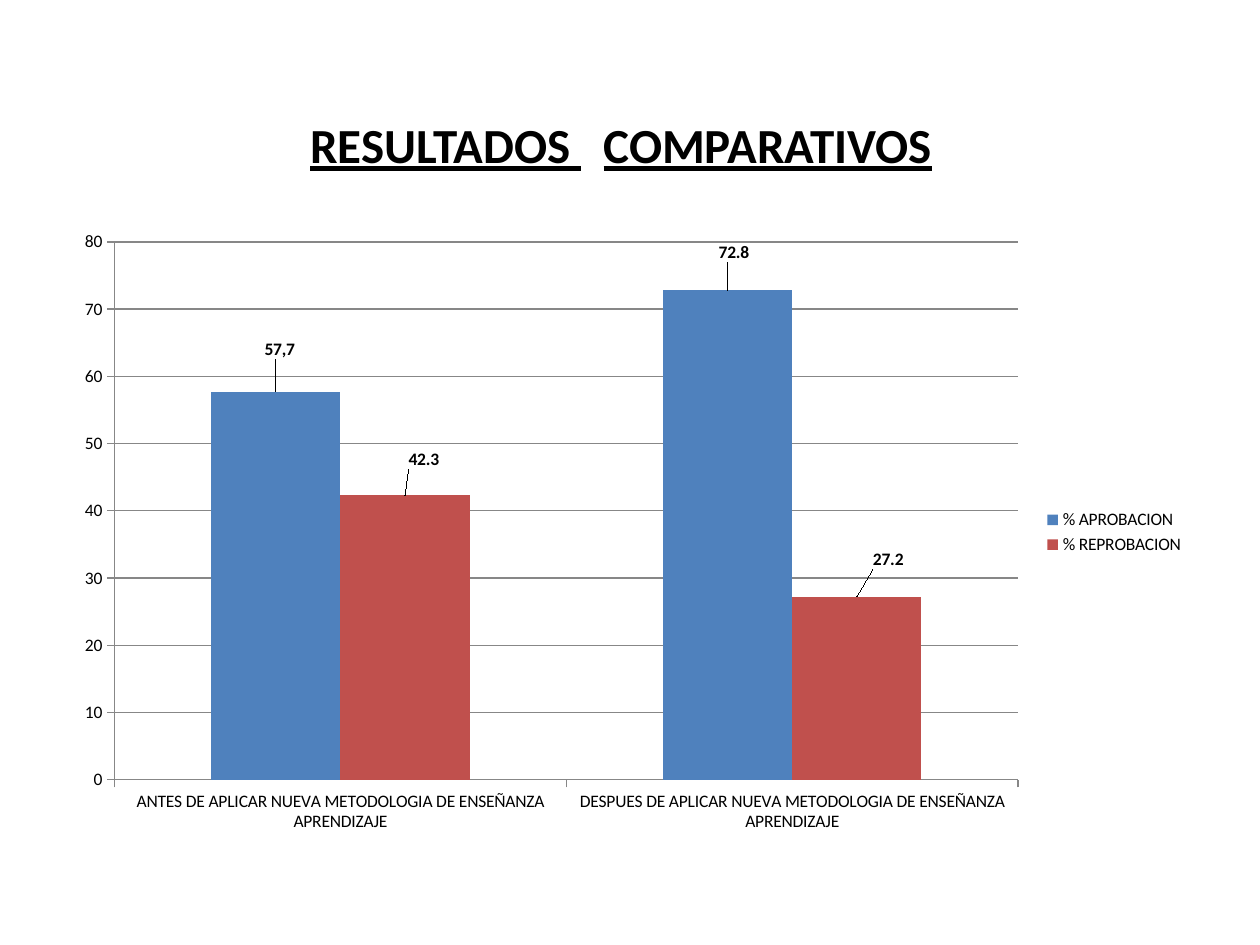
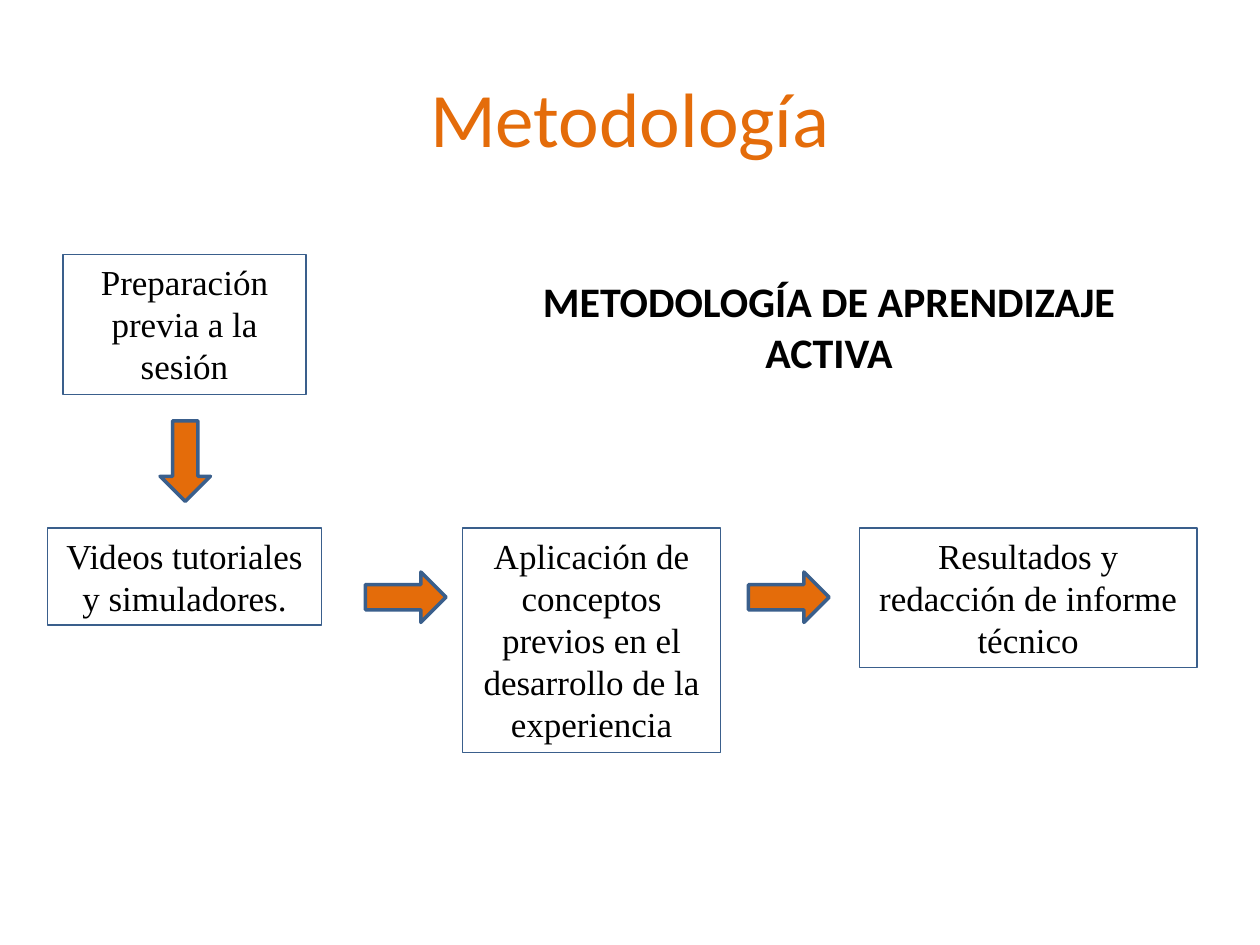
"""Builds two slides: a chart of comparative results and a methodology flow."""
from lxml import etree
from pptx import Presentation
from pptx.chart.data import CategoryChartData
from pptx.dml.color import RGBColor
from pptx.enum.chart import XL_CHART_TYPE, XL_LABEL_POSITION, XL_LEGEND_POSITION, XL_TICK_MARK
from pptx.enum.shapes import MSO_SHAPE
from pptx.enum.text import MSO_ANCHOR, MSO_AUTO_SIZE, PP_ALIGN
from pptx.oxml.ns import qn
from pptx.util import Inches, Pt

CLUSTERED = XL_CHART_TYPE.COLUMN_CLUSTERED
OUTSIDE_END = XL_LABEL_POSITION.OUTSIDE_END
LEGEND_RIGHT = XL_LEGEND_POSITION.RIGHT
TICK_OUT, TICK_NONE = XL_TICK_MARK.OUTSIDE, XL_TICK_MARK.NONE
RECTANGLE, RIGHT_ARROW = MSO_SHAPE.RECTANGLE, MSO_SHAPE.RIGHT_ARROW
TOP, MIDDLE = MSO_ANCHOR.TOP, MSO_ANCHOR.MIDDLE
FIT_TEXT = MSO_AUTO_SIZE.SHAPE_TO_FIT_TEXT
CENTER = PP_ALIGN.CENTER

COLORS = {"text": "000000", "accent": "E46C0A", "outline": "3A5F8C", "grid": "878787",
          "passed": "4F81BD", "failed": "C0504D"}
SANS, SERIF = "Calibri", "Times New Roman"

RESULTS_TITLE = ["RESULTADOS", " ", "COMPARATIVOS"]
WORD_GAP = Pt(12.7)
CATEGORIES = ["ANTES DE APLICAR NUEVA METODOLOGIA DE ENSEÑANZA APRENDIZAJE",
              "DESPUES DE APLICAR NUEVA METODOLOGIA DE ENSEÑANZA APRENDIZAJE"]
SERIES = [
    {"name": "% APROBACION", "values": [57.7, 72.8], "color": "passed",
     "label_shifts": [(0.03, -0.22), (0.05, -0.18)], "label_texts": {0: "57,7"}},
    {"name": "% REPROBACION", "values": [42.3, 27.2], "color": "failed",
     "label_shifts": [(0.15, -0.17), (0.25, -0.18)], "label_texts": {}},
]
CHART_BOX = (0.5, 1.75, 9, 4.95)
PLOT_BOX = (0.41, 0.17, 7.17, 4.27)

METHOD_TITLE = "Metodología"
METHOD_HEADING = ["METODOLOGÍA DE APRENDIZAJE", "ACTIVA"]
STEP_TOP = 4.19
STEPS = [
    ("Preparación previa a la sesión", (0.5, 2.02, 1.93, 1.11)),
    ("Videos tutoriales y simuladores.", (0.38, STEP_TOP, 2.17, 0.77)),
    ("Aplicación de conceptos previos en el desarrollo de la experiencia",
     (3.67, STEP_TOP, 2.05, 1.78)),
    ("Resultados y redacción de informe técnico", (6.82, STEP_TOP, 2.68, 1.11)),
]
ARROW_SIZE = (0.64, 0.4)
ARROWS = [(1.15, 3.46, 90), (2.9, 4.54, 0), (5.94, 4.54, 0)]


def color(name):
    return RGBColor.from_string(COLORS[name])


def inches(box):
    return [Inches(length) for length in box]


def style_font(font, size, name=SANS, fill="text", bold=False):
    font.size, font.name, font.bold = Pt(size), name, bold
    font.color.rgb = color(fill)


def add_text(slide, lines, box, size, fill="text", bold=False, anchor=TOP, wrap=True):
    frame = slide.shapes.add_textbox(*inches(box)).text_frame
    frame.word_wrap, frame.vertical_anchor = wrap, anchor
    frame.text = "\n".join(lines)
    for paragraph in frame.paragraphs:
        paragraph.alignment = CENTER
        style_font(paragraph.font, size, fill=fill, bold=bold)
    return frame


def add_title(slide, text, box, size, fill="text", bold=False):
    return add_text(slide, [text], box, size, fill, bold, anchor=MIDDLE)


def set_layout(layout, **settings):
    manual = etree.SubElement(layout, qn("c:manualLayout"))
    for tag, value in settings.items():
        etree.SubElement(manual, qn("c:" + tag)).set("val", str(value))


def style_series(series, details):
    series.format.fill.solid()
    series.format.fill.fore_color.rgb = color(details["color"])
    labels = series.data_labels
    labels.show_value, labels.position = True, OUTSIDE_END
    style_font(labels.font, 10, bold=True)
    for index, (right, down) in enumerate(details["label_shifts"]):
        label = series.points[index].data_label
        if index in details["label_texts"]:
            run = label.text_frame.paragraphs[0].add_run()
            run.text = details["label_texts"][index]
            style_font(run.font, 10, bold=True)
        else:
            style_font(label.font, 10, bold=True)
        label.position = OUTSIDE_END
        element = series.points[index].data_label._dLbls._get_dLbl_for_point(index) \
            if hasattr(label, "_dLbls") else label._get_or_add_dLbl()
        layout = etree.Element(qn("c:layout"))
        element.find(qn("c:idx")).addnext(layout)
        set_layout(layout, x=right / CHART_BOX[2], y=down / CHART_BOX[3])


def add_results_chart(slide):
    data = CategoryChartData()
    data.categories = CATEGORIES
    for details in SERIES:
        data.add_series(details["name"], details["values"])
    chart = slide.shapes.add_chart(CLUSTERED, *inches(CHART_BOX), data).chart
    style_font(chart.font, 10)
    chart.has_title = False
    chart.has_legend = True
    chart.legend.position, chart.legend.include_in_layout = LEGEND_RIGHT, False
    plot = chart.plots[0]
    plot.gap_width, plot.overlap, plot.vary_by_categories = 150, 0, False
    value_axis = chart.value_axis
    value_axis.minimum_scale, value_axis.maximum_scale, value_axis.major_unit = 0, 80, 10
    value_axis.has_major_gridlines = True
    for axis in (chart.category_axis, value_axis):
        axis.major_tick_mark, axis.minor_tick_mark = TICK_OUT, TICK_NONE
    for part in (chart.category_axis, value_axis, value_axis.major_gridlines):
        part.format.line.color.rgb = color("grid")
        part.format.line.width = Pt(0.75)
    for series, details in zip(plot.series, SERIES):
        style_series(series, details)
    plot_area = chart._chartSpace.chart.plotArea
    layout = plot_area.find(qn("c:layout"))
    if layout is None:
        layout = etree.Element(qn("c:layout"))
        plot_area.insert(0, layout)
    left, top, width, height = PLOT_BOX
    set_layout(layout, layoutTarget="inner", xMode="edge", yMode="edge",
               x=left / CHART_BOX[2], y=top / CHART_BOX[3],
               w=width / CHART_BOX[2], h=height / CHART_BOX[3])


def add_outlined_shape(slide, kind, box, line_width):
    shape = slide.shapes.add_shape(kind, *inches(box))
    shape.shadow.inherit = False
    shape.line.color.rgb, shape.line.width = color("outline"), Pt(line_width)
    return shape


def add_step(slide, text, box):
    step = add_outlined_shape(slide, RECTANGLE, box, 0.75)
    step.fill.background()
    frame = step.text_frame
    frame.word_wrap, frame.auto_size, frame.vertical_anchor = True, FIT_TEXT, TOP
    frame.text = text
    paragraph = frame.paragraphs[0]
    paragraph.alignment = CENTER
    style_font(paragraph.font, 20, SERIF)


def add_arrow(slide, left, top, rotation):
    arrow = add_outlined_shape(slide, RIGHT_ARROW, (left, top, *ARROW_SIZE), 2)
    arrow.fill.solid()
    arrow.fill.fore_color.rgb = color("accent")
    arrow.rotation = rotation


def build_results(slide):
    frame = add_title(slide, "", (0.43, 0.76, 9, 0.77), 28, bold=True)
    paragraph = frame.paragraphs[0]
    paragraph.font.underline = True
    for text in RESULTS_TITLE:
        run = paragraph.add_run()
        run.text = text
        if text == " ":
            run._r.get_or_add_rPr().set("spc", str(int(WORD_GAP.pt * 100)))
    add_results_chart(slide)


def build_methodology(slide):
    add_title(slide, METHOD_TITLE, (0.5, 0.3, 9, 1.25), 44, "accent")
    for text, box in STEPS:
        add_step(slide, text, box)
    for arrow in ARROWS:
        add_arrow(slide, *arrow)
    add_text(slide, METHOD_HEADING, (4.15, 2.14, 4.86, 0.91), 24, bold=True, wrap=False)


def main():
    presentation = Presentation()
    presentation.slide_width, presentation.slide_height = Inches(10), Inches(7.5)
    for build in (build_results, build_methodology):
        build(presentation.slides.add_slide(presentation.slide_layouts[6]))
    presentation.save("out.pptx")


if __name__ == "__main__":
    main()
